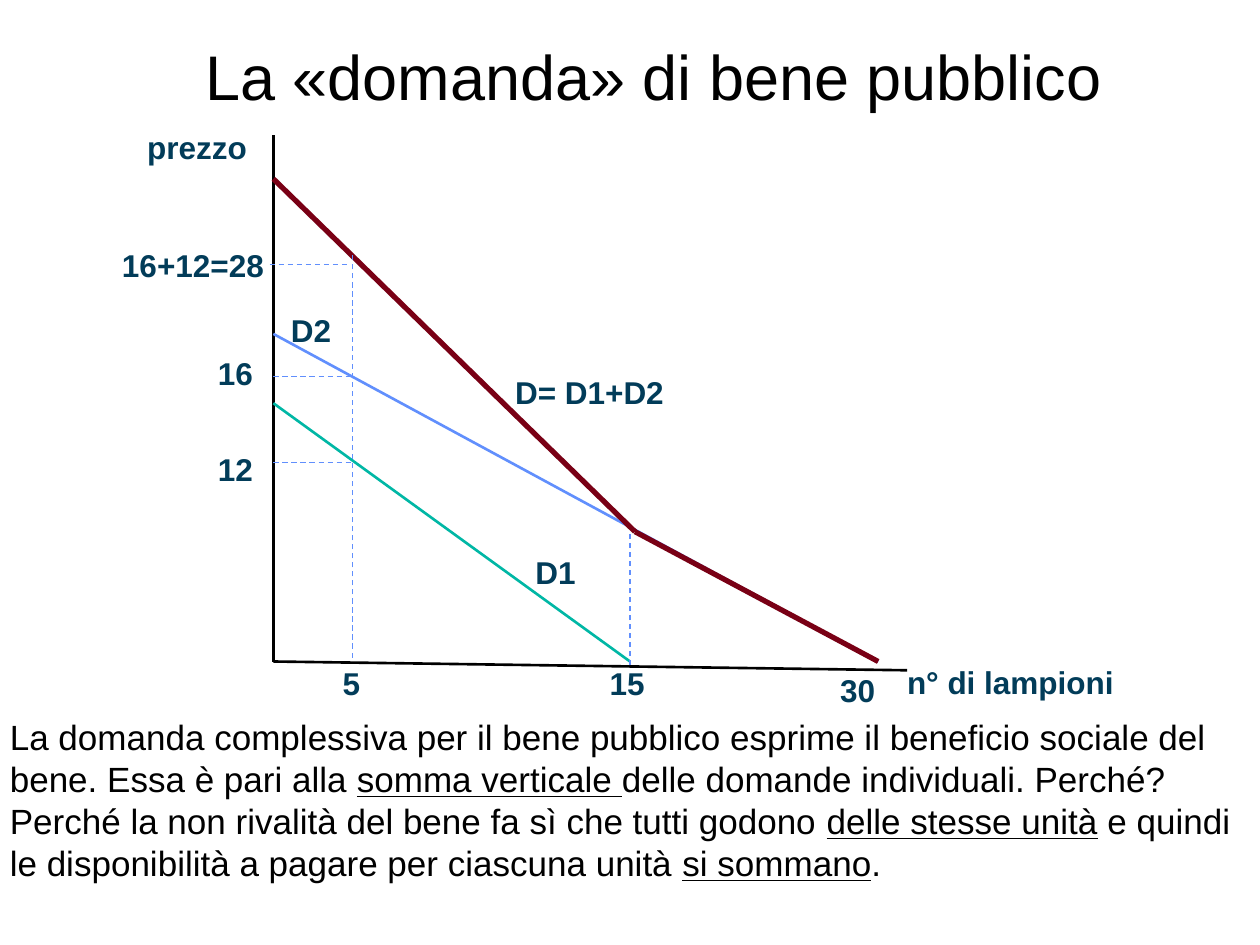
from lxml.etree import SubElement
from pptx import Presentation
from pptx.dml.color import RGBColor
from pptx.enum.dml import MSO_LINE
from pptx.enum.shapes import MSO_CONNECTOR
from pptx.enum.text import MSO_AUTO_SIZE
from pptx.oxml.ns import qn
from pptx.util import Inches, Pt

BLACK = RGBColor(0x00, 0x00, 0x00)
NAVY = RGBColor(0x02, 0x3C, 0x59)
BLUE = RGBColor(0x61, 0x8F, 0xFD)
GREEN = RGBColor(0x00, 0xB7, 0xA5)
DARK_RED = RGBColor(0x79, 0x00, 0x15)

# Key points of the diagram, in inches
AXIS_X, AXIS_Y = 2.17, 5.25
FIVE_X, FIFTEEN_X, THIRTY_X = 2.8, 5, 6.97
KINK = (5.04, 4.22)

# Each line alternates plain and underlined segments
EXPLANATION = [
    ["La domanda complessiva per il bene pubblico esprime il beneficio sociale del"],
    ["bene. Essa è pari alla ", "somma verticale ", "delle domande individuali. Perché?"],
    ["Perché la non rivalità del bene fa sì che tutti godono ", "delle stesse unità",
     " e quindi"],
    ["le disponibilità a pagare per ciascuna unità ", "si sommano", "."],
]

# Text, left, top, width, height
LABELS = [
    ("D1", 4.15, 4.34, 0.75, 0.4),
    ("D2", 2.21, 2.42, 0.75, 0.4),
    ("D= D1+D2", 3.99, 2.91, 1.53, 0.4),
    ("n° di lampioni", 7.1, 5.21, 1.92, 0.4),
    ("prezzo", 1.07, 0.97, 1.12, 0.4),
    ("16+12=28", 0.87, 1.9, 1.47, 0.4),
    ("16", 1.63, 2.76, 0.65, 0.42),
    ("12", 1.63, 3.52, 0.65, 0.42),
    ("5", 2.62, 5.22, 0.65, 0.42),
    ("15", 4.74, 5.22, 0.65, 0.42),
    ("30", 6.57, 5.28, 0.65, 0.42),
]


def add_text(slide, lines, left, top, width, height, *, size=18, color=NAVY,
             bold=False, wrap=True):
    shape = slide.shapes.add_textbox(Inches(left), Inches(top), Inches(width), Inches(height))
    frame = shape.text_frame
    frame.word_wrap = wrap
    frame.auto_size = MSO_AUTO_SIZE.SHAPE_TO_FIT_TEXT
    for number, segments in enumerate(lines):
        paragraph = frame.add_paragraph() if number else frame.paragraphs[0]
        for index, text in enumerate(segments):
            run = paragraph.add_run()
            run.text = text
            run.font.name = "Arial"
            run.font.size = Pt(size)
            run.font.bold = bold
            run.font.underline = index % 2 == 1
            run.font.color.rgb = color


def add_line(slide, start, end, color, width=1.5, dashed=False):
    connector = slide.shapes.add_connector(
        MSO_CONNECTOR.STRAIGHT, *(Inches(value) for value in (*start, *end)))
    connector.line.color.rgb = color
    connector.line.width = Pt(width)
    if dashed:
        connector.line.dash_style = MSO_LINE.DASH
    SubElement(connector._element.spPr, qn("a:effectLst"))


def add_curves(slide):
    origin = (AXIS_X, AXIS_Y)
    # Axes
    add_line(slide, origin, (AXIS_X, 1.07), BLACK)
    add_line(slide, origin, (7.2, 5.32), BLACK)
    # Individual demands
    add_line(slide, (AXIS_X, 2.65), (THIRTY_X, AXIS_Y), BLUE)
    add_line(slide, (AXIS_X, 3.2), (FIFTEEN_X, AXIS_Y), GREEN)
    # Total demand
    add_line(slide, (AXIS_X, 1.42), KINK, DARK_RED, width=3)
    add_line(slide, KINK, (THIRTY_X, AXIS_Y), DARK_RED, width=3)


def add_guides(slide):
    guides = [
        ((FIVE_X, 5.22), (FIVE_X, 2.02)),
        ((FIFTEEN_X, 5.28), (FIFTEEN_X, KINK[1])),
        ((2.14, 2.1), (2.77, 2.1)),
    ]
    guides += [((AXIS_X, y), (FIVE_X, y)) for y in (2.99, 3.67)]
    for start, end in guides:
        add_line(slide, start, end, BLUE, width=0.75, dashed=True)


def main():
    presentation = Presentation()
    presentation.slide_width = Inches(10)
    presentation.slide_height = Inches(7.5)
    slide = presentation.slides.add_slide(presentation.slide_layouts[6])

    # Diagram
    add_curves(slide)
    for text, *box in LABELS:
        add_text(slide, [[text]], *box, bold=True)
    add_guides(slide)

    # Title and explanation
    add_text(slide, [["La «domanda» di bene pubblico"]], 1.53, 0.25, 7.38, 0.71,
             size=36, color=BLACK, wrap=False)
    add_text(slide, EXPLANATION, -0.02, 5.63, 10.03, 1.45,
             size=20, color=BLACK, wrap=False)

    presentation.save("out.pptx")


if __name__ == "__main__":
    main()
